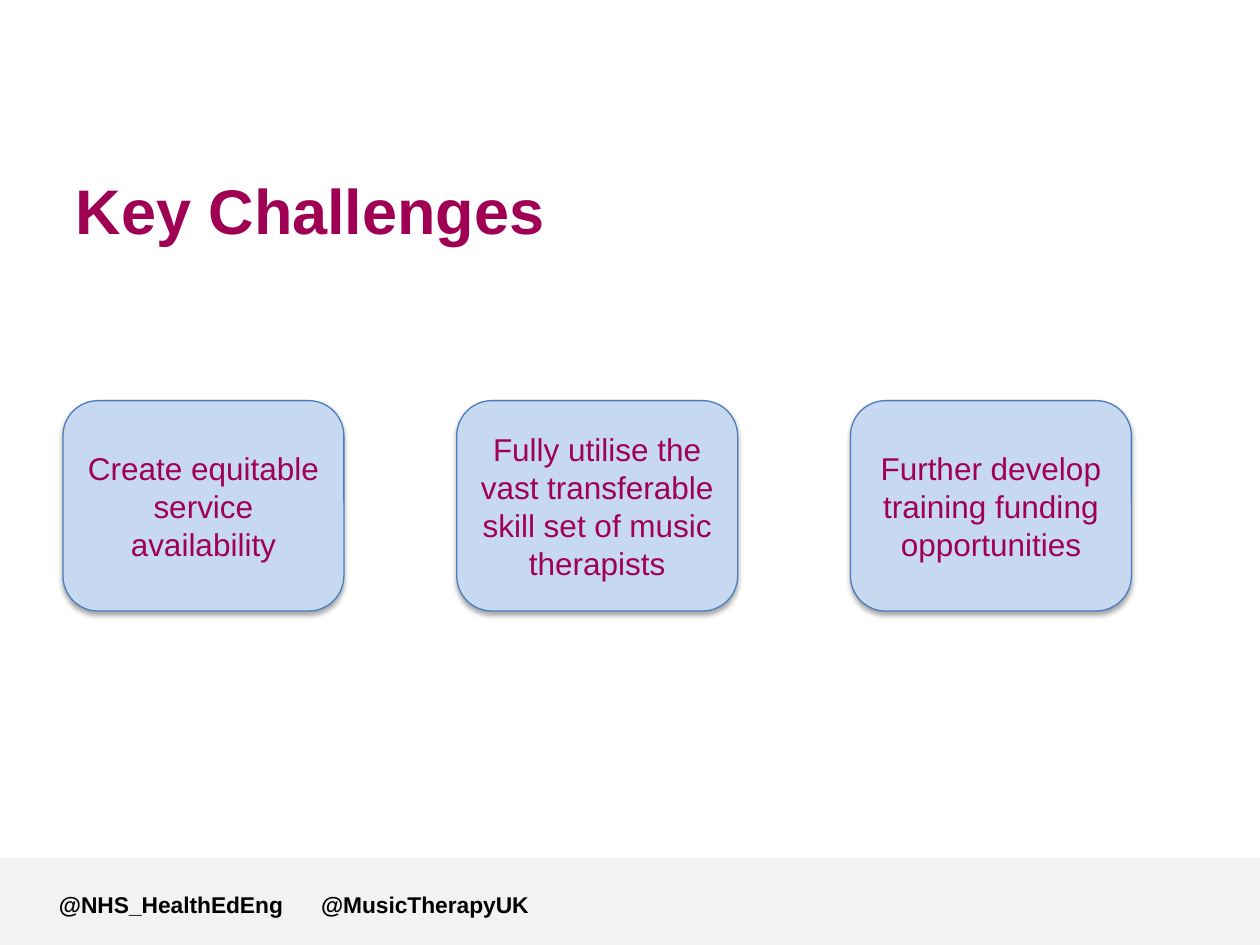
from lxml.etree import SubElement as Sub
from pptx import Presentation
from pptx.dml.color import RGBColor as Rgb
from pptx.enum.shapes import MSO_SHAPE as Kind
from pptx.enum.text import MSO_ANCHOR as Anchor, MSO_AUTO_SIZE as Auto, PP_ALIGN as Align
from pptx.oxml.ns import qn
from pptx.util import Inches, Pt

PLUM = "A00054"
GOALS = [
    "Create equitable service availability",
    "Fully utilise the vast transferable skill set of music therapists",
    "Further develop training funding opportunities",
]


def tint(part, hue):
    if hasattr(part, "solid"):
        part.solid()
        part.fore_color.rgb = Rgb.from_string(hue)
    else:
        part.color.rgb = Rgb.from_string(hue)


def write(shape, text, size=18, hue=PLUM, bold=False, align=Align.LEFT,
          anchor=Anchor.MIDDLE, tab=None):
    frame = shape.text_frame
    frame.word_wrap = True
    frame.auto_size = Auto.NONE
    frame.vertical_anchor = anchor
    para = frame.paragraphs[0]
    para.alignment = align
    if tab:
        stops = Sub(para._p.get_or_add_pPr(), qn("a:tabLst"))
        Sub(stops, qn("a:tab"), pos=str(Inches(tab)), algn="l")
    run = para.add_run()
    run.text = text
    font = run.font
    font.name, font.size, font.bold = "Arial", Pt(size), bold
    tint(font, hue)


def shade(shape):
    shape.shadow.inherit = False
    glow = shape._element.spPr.find(qn("a:effectLst"))
    drop = Sub(glow, qn("a:outerShdw"), blurRad=str(Pt(3.1)), dist=str(Pt(1.8)),
               dir="5400000", rotWithShape="0")
    black = Sub(drop, qn("a:srgbClr"), val="000000")
    Sub(black, qn("a:alpha"), val="35000")


def head(slide, left, top, width, height):
    title = slide.shapes.title
    title.left, title.top = Inches(left), Inches(top)
    title.width, title.height = Inches(width), Inches(height)
    write(title, "Key Challenges", size=36, bold=True)


def cards(slide, left, top, width, height, wide=2.23):
    step = (width - wide) / (len(GOALS) - 1)
    for i, goal in enumerate(GOALS):
        card = slide.shapes.add_shape(
            Kind.ROUNDED_RECTANGLE, Inches(left + i * step), Inches(top),
            Inches(wide), Inches(height))
        tint(card.fill, "C6D9F1")
        tint(card.line, "4B7EBC")
        card.line.width = Pt(0.75)
        shade(card)
        write(card, goal, align=Align.CENTER)


def foot(slide, left, top, width, height):
    band = slide.shapes.add_shape(
        Kind.RECTANGLE, Inches(left), Inches(top), Inches(width), Inches(height))
    tint(band.fill, "F2F2F2")
    band.line.fill.background()
    band.shadow.inherit = False
    names = slide.shapes.add_textbox(
        Inches(left + 0.37), Inches(top + 0.21), Inches(5.84), Inches(0.4))
    write(names, "@NHS_HealthEdEng\t@MusicTherapyUK", size=13, hue="000000",
          bold=True, anchor=Anchor.TOP, tab=2.08)


def main():
    deck = Presentation()
    deck.slide_width, deck.slide_height = Inches(10), Inches(7.5)
    slide = deck.slides.add_slide(deck.slide_layouts[5])
    foot(slide, 0, 6.81, 10, 0.69)
    head(slide, 0.5, 1.29, 8.5, 0.74)
    cards(slide, 0.5, 3.18, 8.48, 1.67)
    deck.save("out.pptx")


if __name__ == "__main__":
    main()
